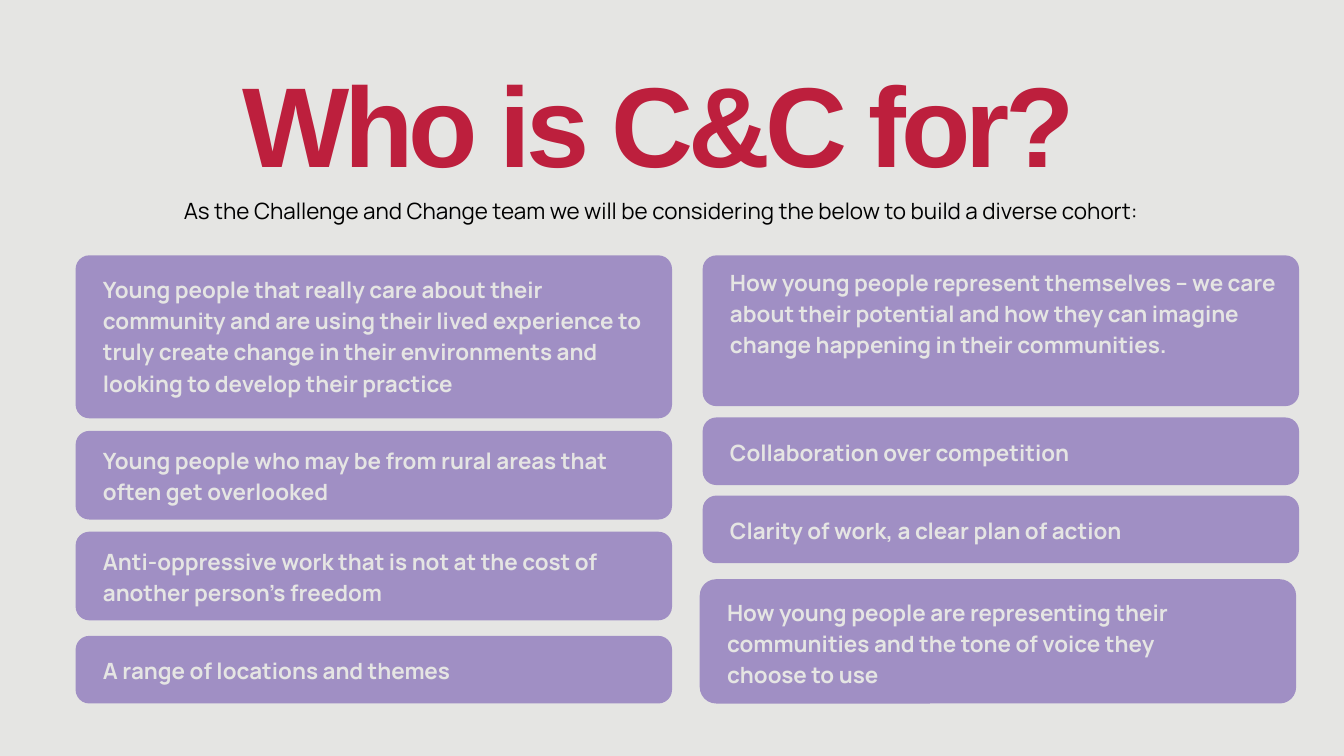
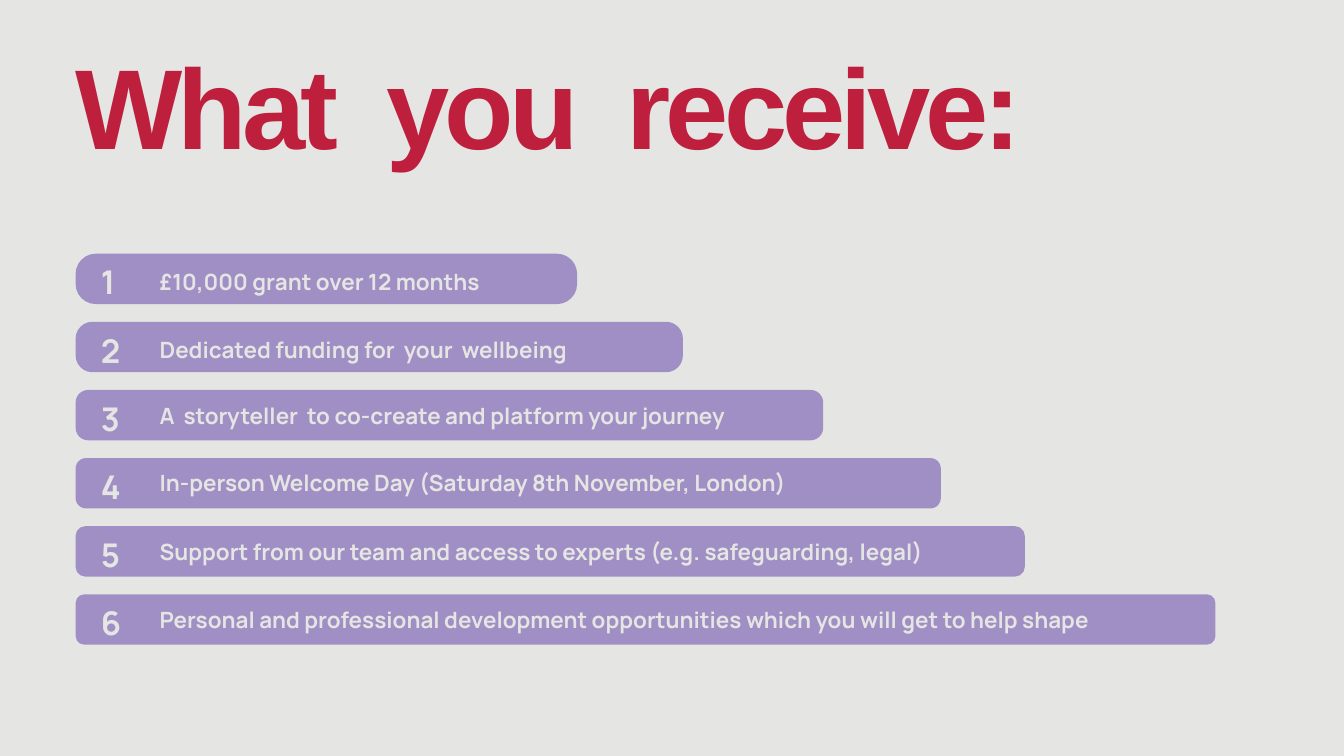
import dataclasses

import pptx
import pptx.dml.color
import pptx.enum.shapes
import pptx.enum.text
import pptx.util


@dataclasses.dataclass(frozen=True)
class Style:
    """Type face, size, line height, colour, weight and tracking of a text."""
    font: str
    size: float
    line: float
    ink: str
    bold: bool = True
    track: float = 0


@dataclasses.dataclass(frozen=True)
class Theme:
    """Colours and type shared by the slides."""
    paper: str = "E5E5E3"
    panel: str = "A08FC4"
    title: Style = Style("Arial", 121.7, 120.5, "BD1F3D", track=-5.3)
    tight: Style = Style("Arial", 121.7, 104.7, "BD1F3D", track=-5.3)
    intro: Style = Style("Manrope", 24, 33.6, "000000", bold=False)
    body: Style = Style("Manrope", 24, 33.6, "E5E5E3")
    digit: Style = Style("Manrope", 35, 49, "E5E5E3", track=-2.5)


THEME = Theme()
WIDE, HIGH = 20, 11.25
COLS, ROWS = 160, 90
EDGE = 9
CARD = 71
LEFT = [
    (30.4, 19.4, 1.9, ["Young people that really care about their community and are using "
                       "their lived experience to truly create change in their "
                       "environments and looking to develop their practice"]),
    (51.3, 10.55, 1.4, ["Young people who may be from rural areas that often get overlooked"]),
    (63.3, 10.55, 1.4, ["Anti-oppressive work that is not at the cost of another "
                        "person’s freedom"]),
    (75.7, 8.05, 2, ["A range of locations and themes"]),
]
RIGHT = [
    (30.4, 17.95, 1.05, ["How young people represent themselves – we care about their "
                         "potential and how they can imagine change happening in their "
                         "communities."]),
    (49.7, 8.05, 2, ["Collaboration over competition"]),
    (59, 8.05, 2, ["Clarity of work, a clear plan of action"]),
]
LAST = (68.95, 14.8, 1.8, ["How young people are representing their communities and the "
                           "tone of voice they", "choose to use"])
BARS = [
    (59.7, 2.4, 1.2, "£10,000 grant over 12 months"),
    (72.3, 2, 1.15, "Dedicated funding for  your  wellbeing"),
    (89, 1.5, 0.9, "A  storyteller  to co-create and platform your journey"),
    (103, 1.25, 0.8, "In-person Welcome Day (Saturday 8th November, London)"),
    (113, 1.15, 0.9, "Support from our team and access to experts (e.g. safeguarding, legal) "),
    (135.7, 1.05, 0.9, "Personal and professional development opportunities which you will "
                       "get to help shape "),
]


def place(left, top, wide, high):
    """Turn columns and rows into slide lengths."""
    col, row = WIDE / COLS, HIGH / ROWS
    return [pptx.util.Inches(n) for n in (left * col, top * row, wide * col, high * row)]


def tint(name):
    """Return a colour from its hex name."""
    return pptx.dml.color.RGBColor.from_string(name)


def add_page(deck):
    """Add a blank slide with the shared ground."""
    page = deck.slides.add_slide(deck.slide_layouts[6])
    page.background.fill.solid()
    page.background.fill.fore_color.rgb = tint(THEME.paper)
    return page


def add_text(shapes, area, lines, style, center=False):
    """Add a text box with one paragraph for each line."""
    frame = shapes.add_textbox(*place(*area)).text_frame
    frame.word_wrap = True
    frame.auto_size = pptx.enum.text.MSO_AUTO_SIZE.SHAPE_TO_FIT_TEXT
    frame.margin_left = frame.margin_right = frame.margin_top = frame.margin_bottom = 0
    align = pptx.enum.text.PP_ALIGN
    for spot, line in enumerate(lines):
        para = frame.add_paragraph() if spot else frame.paragraphs[0]
        para.alignment = align.CENTER if center else align.LEFT
        para.line_spacing = pptx.util.Pt(style.line)
        run = para.add_run()
        run.text = line
        run.font.name = style.font
        run.font.size = pptx.util.Pt(style.size)
        run.font.bold = style.bold
        run.font.color.rgb = tint(style.ink)
        if style.track:
            run.font._element.set("spc", str(round(style.track * 100)))


def add_panel(shapes, area, curve):
    """Add a plain rounded panel with the given corner radius."""
    kind = pptx.enum.shapes.MSO_SHAPE.ROUNDED_RECTANGLE
    panel = shapes.add_shape(kind, *place(*area))
    panel.adjustments[0] = curve / min(area[2:])
    panel.shadow.inherit = False
    panel.fill.solid()
    panel.fill.fore_color.rgb = tint(THEME.panel)
    panel.line.fill.background()


def add_card(page, left, card, curve=1.63):
    """Add a grouped panel and its text."""
    top, high, pad, lines = card
    group = page.shapes.add_group_shape().shapes
    add_panel(group, (left, top, CARD, high), curve)
    add_text(group, (left + 3.25, top + pad, 66.65, high - 2 * pad), lines, THEME.body)


def add_bar(page, top, count, bar):
    """Add a numbered bar."""
    wide, curve, pad, line = bar
    add_panel(page.shapes, (EDGE, top, wide, 6), curve)
    add_text(page.shapes, (EDGE + 3, top + 0.25, 2.3, 5.45), [str(count)], THEME.digit)
    add_text(page.shapes, (EDGE + 10, top + pad, wide - 10, 3.65), [line], THEME.body)


def draw_who(deck):
    """Draw the slide on who the scheme is for."""
    page = add_page(deck)
    add_text(page.shapes, (15.3, 9.2, 129.35, 14.1), ["Who is C&C for? "],
             THEME.title, True)
    add_text(page.shapes, (14.25, 22.9, 129.35, 3.7),
             ["As the Challenge and Change team we will be considering the below "
              "to build a diverse cohort: "], THEME.intro, True)
    for left, cards in ((EDGE, LEFT), (83.65, RIGHT)):
        for card in cards:
            add_card(page, left, card)
    add_card(page, 83.3, LAST, 1.95)


def draw_what(deck):
    """Draw the slide on what people receive."""
    page = add_page(deck)
    add_text(page.shapes, (EDGE, 8.9, 116.9, 12.8), ["What  you  receive:"], THEME.tight)
    for spot, bar in enumerate(BARS):
        add_bar(page, 30.2 + 8.11 * spot, spot + 1, bar)


def main():
    """Build and save the deck."""
    deck = pptx.Presentation()
    deck.slide_width = pptx.util.Inches(WIDE)
    deck.slide_height = pptx.util.Inches(HIGH)
    draw_who(deck)
    draw_what(deck)
    deck.save("out.pptx")


if __name__ == "__main__":
    main()
